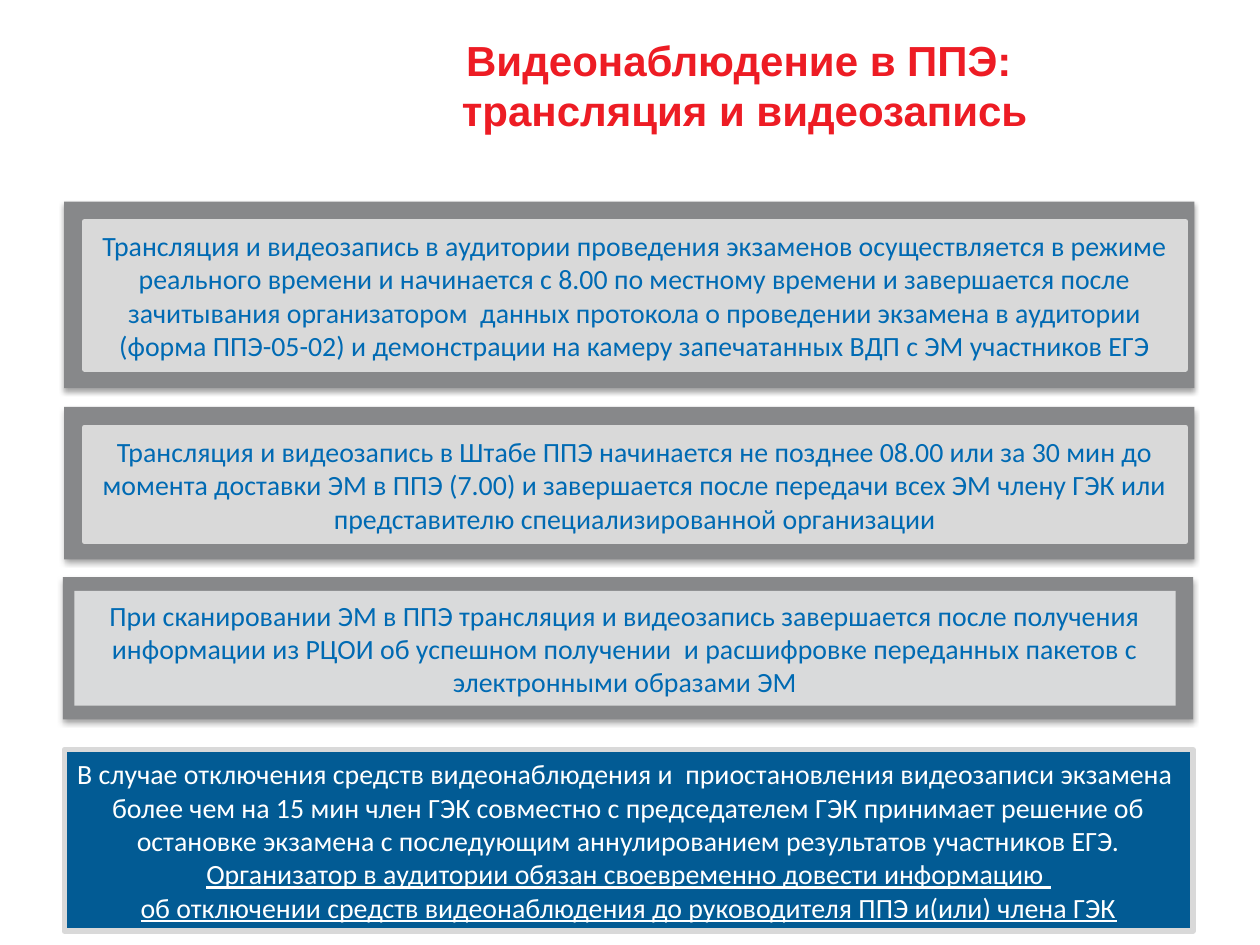
from dataclasses import dataclass
from typing import Optional

from lxml.etree import SubElement
from pptx import Presentation
from pptx.dml.color import RGBColor
from pptx.enum.shapes import MSO_SHAPE as Shape
from pptx.enum.text import MSO_ANCHOR as Anchor, MSO_AUTO_SIZE as AutoSize, PP_ALIGN as Align
from pptx.oxml.ns import qn
from pptx.util import Emu, Pt

EMU_PER_PX = 9144


@dataclass(frozen=True)
class Theme:
    title: str = "ED1C24"
    text: str = "006AB3"
    frame: str = "87888A"
    panel: str = "D9D9D9"
    plain_panel: str = "D9DADB"
    alert: str = "025B94"
    alert_text: str = "FFFFFF"
    title_font: str = "Arial"
    body_font: str = "Calibri"
    title_size: float = 24
    body_size: float = 15.9
    border: float = 3


@dataclass(frozen=True)
class Rect:
    left: int
    top: int
    width: int
    height: int


@dataclass(frozen=True)
class Span:
    text: str
    color: str
    underline: bool = False


@dataclass(frozen=True)
class Card:
    frame: Rect
    panel: Rect
    fill: str
    border: Optional[str]
    text: str


THEME = Theme()
TITLE = "Видеонаблюдение в ППЭ: \nтрансляция и видеозапись"
TITLE_RECT = Rect(209, 20, 764, 94)
CARDS = [
    Card(Rect(51, 160, 897, 148), Rect(67, 176, 874, 117), THEME.panel, THEME.panel,
         "Трансляция и видеозапись в аудитории проведения экзаменов осуществляется "
         "в режиме реального времени и начинается с 8.00 по местному времени и завершается "
         "после зачитывания организатором  данных протокола о проведении экзамена в аудитории "
         "(форма ППЭ-05-02) и демонстрации на камеру запечатанных ВДП с ЭМ участников ЕГЭ"),
    Card(Rect(51, 323, 897, 121), Rect(67, 339, 874, 91), THEME.panel, THEME.panel,
         "Трансляция и видеозапись в Штабе ППЭ начинается не позднее 08.00 или за 30 мин до "
         "момента доставки ЭМ в ППЭ (7.00) и завершается после передачи всех ЭМ члену ГЭК или "
         "представителю специализированной организации"),
    Card(Rect(50, 458, 897, 113), Rect(59, 469, 874, 91), THEME.plain_panel, None,
         "При сканировании ЭМ в ППЭ трансляция и видеозапись завершается после получения "
         "информации из РЦОИ об успешном получении  и расшифровке переданных пакетов "
         "с электронными образами ЭМ"),
]
ALERT_RECT = Rect(51, 595, 896, 144)
ALERT = [
    Span("В случае отключения средств видеонаблюдения и  приостановления видеозаписи экзамена  "
         "более чем на 15 мин член ГЭК совместно с председателем ГЭК принимает решение "
         "об остановке экзамена с последующим аннулированием результатов участников ЕГЭ. ",
         THEME.alert_text),
    Span("Организатор в аудитории обязан своевременно довести информацию \n"
         "об отключении средств видеонаблюдения до руководителя ППЭ и(или) члена ГЭК",
         THEME.alert_text, True),
]


def px(value: int) -> Emu:
    return Emu(value * EMU_PER_PX)


def write(box, spans: list[Span], font: str, size: float, bold: bool = False) -> None:
    frame = box.text_frame
    frame.word_wrap = True
    frame.vertical_anchor = Anchor.MIDDLE
    para = frame.paragraphs[0]
    para.alignment = Align.CENTER
    for span in spans:
        for index, line in enumerate(span.text.split("\n")):
            if index:
                para.add_line_break()
            run = para.add_run()
            run.text = line
            run.font.name = font
            run.font.size = Pt(size)
            run.font.bold = bold
            run.font.underline = span.underline
            run.font.color.rgb = RGBColor.from_string(span.color)


def draw_box(page, rect: Rect, fill: str, border: Optional[str] = None):
    box = page.shapes.add_shape(Shape.RECTANGLE, px(rect.left), px(rect.top),
                                px(rect.width), px(rect.height))
    box.shadow.inherit = False
    box.fill.solid()
    box.fill.fore_color.rgb = RGBColor.from_string(fill)
    if border:
        box.line.color.rgb = RGBColor.from_string(border)
        box.line.width = Pt(THEME.border)
    else:
        box.line.fill.background()
    return box


def draw_text_box(page, rect: Rect, fill: str, border: Optional[str], spans: list[Span]) -> None:
    box = draw_box(page, rect, fill, border)
    write(box, spans, THEME.body_font, THEME.body_size)
    box.text_frame.auto_size = AutoSize.SHAPE_TO_FIT_TEXT


def add_shadow(box) -> None:
    effects = box._element.spPr.find(qn("a:effectLst"))
    shadow = SubElement(effects, qn("a:outerShdw"), blurRad="40000", dist="23000",
                        dir="5400000", rotWithShape="0")
    color = SubElement(shadow, qn("a:srgbClr"), val="000000")
    SubElement(color, qn("a:alpha"), val="35000")


def draw_card(page, card: Card) -> None:
    add_shadow(draw_box(page, card.frame, THEME.frame))
    draw_text_box(page, card.panel, card.fill, card.border, [Span(card.text, THEME.text)])


def draw_title(page) -> None:
    title = page.shapes.title
    title.left, title.top = px(TITLE_RECT.left), px(TITLE_RECT.top)
    title.width, title.height = px(TITLE_RECT.width), px(TITLE_RECT.height)
    write(title, [Span(TITLE, THEME.title)], THEME.title_font, THEME.title_size, bold=True)


def main() -> None:
    deck = Presentation()
    deck.slide_width, deck.slide_height = px(1000), px(750)
    page = deck.slides.add_slide(deck.slide_layouts[5])
    draw_title(page)
    for card in CARDS:
        draw_card(page, card)
    draw_text_box(page, ALERT_RECT, THEME.alert, THEME.panel, ALERT)
    deck.save("out.pptx")


if __name__ == "__main__":
    main()
